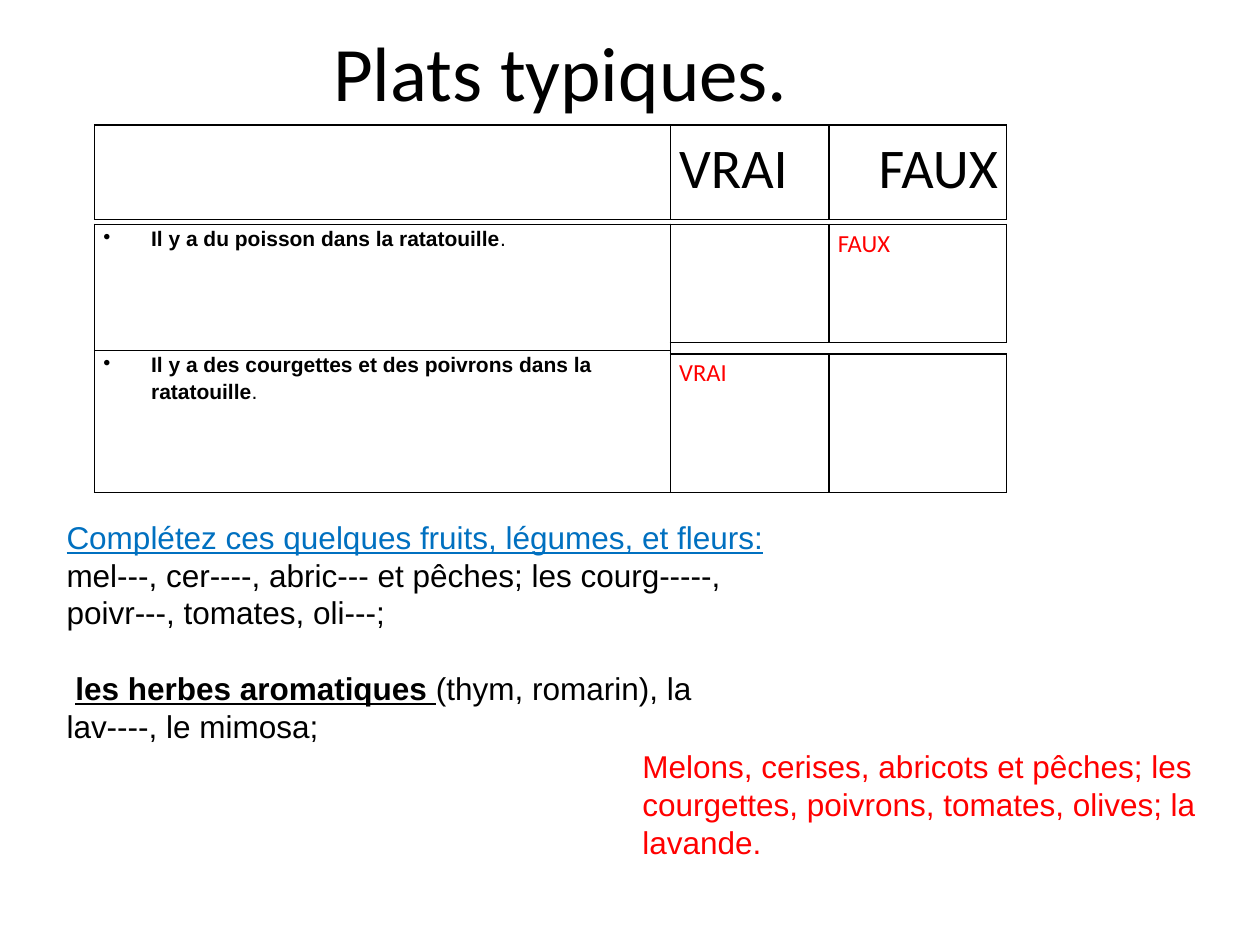
from lxml import etree
from pptx import Presentation
from pptx.dml.color import RGBColor
from pptx.enum import text
from pptx.oxml import ns
from pptx.util import Inches, Pt

COLORS = {"ink": "000000", "heading": "0070C0", "answer": "FF0000"}
STATEMENT_WIDTH = 4.57
ANSWER_WIDTHS = [1.26, 1.41]


def set_font(font, name, size, color):
    font.name = name
    font.size = Pt(size)
    font.color.rgb = RGBColor.from_string(COLORS[color])


def add_span(para, words, bold=False, underline=False):
    span = para.add_run()
    span.text = words
    span.font.bold = bold
    span.font.underline = underline
    return span


def add_title(page, left, top, width, height):
    box = page.shapes.title
    box.left, box.top = Inches(left), Inches(top)
    box.width, box.height = Inches(width), Inches(height)
    frame = box.text_frame
    frame.text = "Plats typiques."
    frame.vertical_anchor = text.MSO_ANCHOR.MIDDLE
    para = frame.paragraphs[0]
    para.alignment = text.PP_ALIGN.CENTER
    set_font(para.font, "Calibri", 44, "ink")


def style_cell(cell):
    cell.margin_left = cell.margin_right = Inches(0.07)
    cell.margin_top = cell.margin_bottom = 0
    properties = cell._tc.get_or_add_tcPr()
    for side in ("a:lnL", "a:lnR", "a:lnT", "a:lnB"):
        line = etree.SubElement(properties, ns.qn(side), w=str(Pt(1)))
        fill = etree.SubElement(line, ns.qn("a:solidFill"))
        etree.SubElement(fill, ns.qn("a:srgbClr"), val=COLORS["ink"])
    cell.fill.background()


def add_grid(page, left, top, widths, heights):
    frame = page.shapes.add_table(
        len(heights), len(widths), Inches(left), Inches(top),
        Inches(sum(widths)), Inches(sum(heights)))
    grid = frame.table
    grid.first_row = grid.horz_banding = False
    for column, width in zip(grid.columns, widths):
        column.width = Inches(width)
    for row, height in zip(grid.rows, heights):
        row.height = Inches(height)
    for cell in grid.iter_cells():
        style_cell(cell)
    return grid


def write_statement(cell, words):
    para = cell.text_frame.paragraphs[0]
    para.line_spacing = 1.15
    properties = para._p.get_or_add_pPr()
    properties.set("marL", str(Inches(0.38)))
    properties.set("indent", str(Inches(-0.38)))
    etree.SubElement(properties, ns.qn("a:buChar"), char="•")
    tabs = etree.SubElement(properties, ns.qn("a:tabLst"))
    etree.SubElement(tabs, ns.qn("a:tab"), pos=str(Inches(0.5)), algn="l")
    set_font(para.font, "Arial", 12, "ink")
    add_span(para, words, bold=True)
    add_span(para, ".")


def write_label(cell, words, size, color):
    cell.text = words
    para = cell.text_frame.paragraphs[0]
    para.line_spacing = 1.15
    set_font(para.font, "Calibri", size, color)
    return para


def add_quiz(page, left, top):
    answers_left = left + STATEMENT_WIDTH
    add_grid(page, left, top, [STATEMENT_WIDTH], [0.75])
    header = add_grid(page, answers_left, top, ANSWER_WIDTHS, [0.75])
    write_label(header.cell(0, 0), "VRAI", 32, "ink")
    false_label = write_label(header.cell(0, 1), "FAUX", 32, "ink")
    false_label.alignment = text.PP_ALIGN.RIGHT

    statements = add_grid(page, left, top + 0.79, [STATEMENT_WIDTH], [1, 1.13])
    for row, words in enumerate((
            "Il y a du poisson dans la ratatouille",
            "Il y a des courgettes et des poivrons dans la ratatouille")):
        write_statement(statements.cell(row, 0), words)

    for offset, height, column, words in (
            (0.79, 0.94, 1, "FAUX"), (1.82, 1.1, 0, "VRAI")):
        answers = add_grid(page, answers_left, top + offset, ANSWER_WIDTHS, [height])
        write_label(answers.cell(0, column), words, 14, "answer")


def add_text_frame(page, left, top, width, height):
    box = page.shapes.add_textbox(
        Inches(left), Inches(top), Inches(width), Inches(height))
    frame = box.text_frame
    frame.word_wrap = True
    frame.auto_size = text.MSO_AUTO_SIZE.SHAPE_TO_FIT_TEXT
    return frame


def add_exercise(page, left, top, width, height):
    frame = add_text_frame(page, left, top, width, height)
    produce = frame.paragraphs[0]
    set_font(produce.font, "Arial", 18, "ink")
    heading = add_span(
        produce, "Complétez ces quelques fruits, légumes, et fleurs: ", underline=True)
    set_font(heading.font, "Arial", 18, "heading")
    add_span(produce, "mel---, cer----, abric--- et pêches; les courg-----, "
                      "poivr---, tomates, oli---;")

    herbs = frame.add_paragraph()
    herbs.space_before = Pt(21.6)
    herbs._p.get_or_add_pPr().set("indent", str(Inches(0.07)))
    set_font(herbs.font, "Arial", 18, "ink")
    add_span(herbs, "les herbes aromatiques ", bold=True, underline=True)
    add_span(herbs, "(thym, romarin), la lav----, le mimosa;")


def add_solution(page, left, top, width, height):
    frame = add_text_frame(page, left, top, width, height)
    frame.text = ("Melons, cerises, abricots et pêches; les courgettes, "
                  "poivrons, tomates, olives; la lavande.")
    set_font(frame.paragraphs[0].font, "Arial", 18, "answer")


def main():
    deck = Presentation()
    deck.slide_width, deck.slide_height = Inches(10), Inches(7.5)
    page = deck.slides.add_slide(deck.slide_layouts[5])
    add_title(page, 1.46, 0.13, 5.98, 0.87)
    add_exercise(page, 0.43, 4.06, 5.83, 1.92)
    add_quiz(page, 0.75, 0.99)
    add_solution(page, 5, 5.88, 5, 1.01)
    deck.save("out.pptx")


if __name__ == "__main__":
    main()
